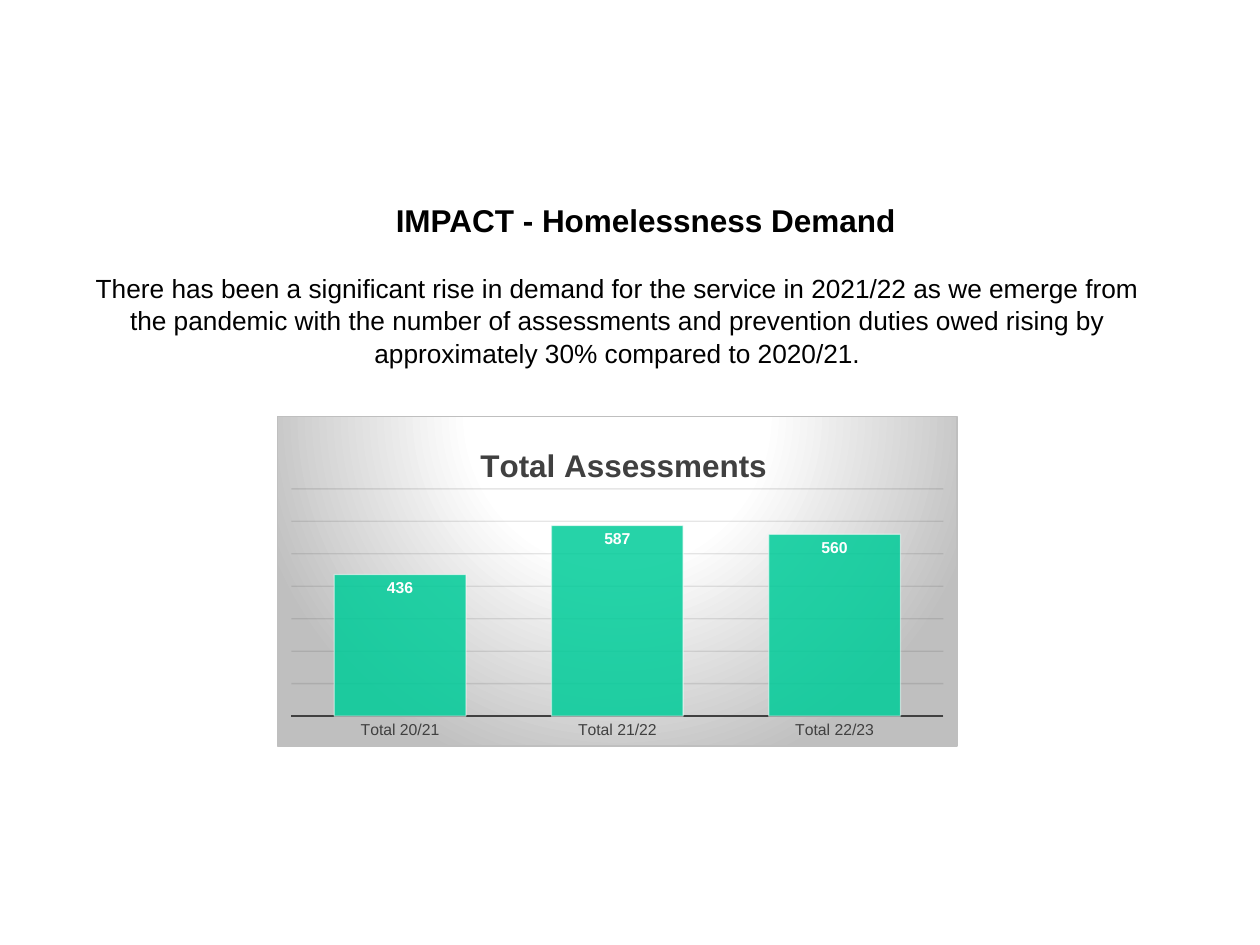
from lxml.etree import SubElement
from pptx import Presentation
from pptx.chart.data import CategoryChartData
from pptx.dml.color import RGBColor
from pptx.enum.chart import XL_CHART_TYPE, XL_LABEL_POSITION, XL_TICK_LABEL_POSITION, XL_TICK_MARK
from pptx.enum.text import MSO_ANCHOR, PP_ALIGN
from pptx.oxml import parse_xml
from pptx.oxml.ns import nsdecls, qn
from pptx.util import Inches, Pt

BLACK = RGBColor(0x00, 0x00, 0x00)
WHITE = RGBColor(0xFF, 0xFF, 0xFF)
CHARCOAL = RGBColor(0x40, 0x40, 0x40)
GRID = RGBColor(0x0D, 0x0D, 0x0D)
SILVER = RGBColor(0xBF, 0xBF, 0xBF)
GREEN = RGBColor(0x00, 0xCC, 0x99)
FONT = "Arial"


class SlideBuilder:
    def __init__(self, presentation):
        self.width = presentation.slide_width
        self.height = presentation.slide_height
        self.slide = presentation.slides.add_slide(presentation.slide_layouts[6])

    def place(self, left, top, width, height):
        return (int(left * self.width), int(top * self.height),
                int(width * self.width), int(height * self.height))

    def style(self, font, size, color, bold=False):
        font.name = FONT
        font.size = Pt(size)
        font.bold = bold
        font.color.rgb = color

    def line(self, line, color, width, opacity=100):
        line.color.rgb = color
        line.width = Pt(width)
        self.fade(line.fill, opacity)

    def fade(self, fill, opacity):
        color = fill._xPr.find(".//" + qn("a:srgbClr"))
        SubElement(color, qn("a:alpha")).set("val", str(opacity * 1000))

    def text(self, area, words, size, bold=False, anchor=MSO_ANCHOR.TOP, spacing=1.0):
        frame = self.slide.shapes.add_textbox(*self.place(*area)).text_frame
        frame.word_wrap = True
        frame.vertical_anchor = anchor
        paragraph = frame.paragraphs[0]
        paragraph.alignment = PP_ALIGN.CENTER
        paragraph.line_spacing = spacing
        run = paragraph.add_run()
        run.text = words
        self.style(run.font, size, BLACK, bold)

    def layout(self, element, **values):
        for old in element.findall(qn("c:layout")):
            element.remove(old)
        layout = parse_xml(f"<c:layout {nsdecls('c')}><c:manualLayout/></c:layout>")
        for name, value in values.items():
            SubElement(layout[0], qn("c:" + name)).set("val", str(value))
        return layout

    def backdrop(self, chart):
        stops = "".join(
            f'<a:gs pos="{position * 1000}"><a:srgbClr val="{color}"/></a:gs>'
            for position, color in ((0, WHITE), (39, WHITE), (100, SILVER)))
        chart.font._element.getparent()
        properties = parse_xml(
            f'<c:spPr {nsdecls("c", "a")}><a:gradFill><a:gsLst>{stops}</a:gsLst>'
            '<a:path path="circle"><a:fillToRect l="50000" t="-80000" r="50000" b="180000"/>'
            f'</a:path></a:gradFill><a:ln w="{Pt(0.75)}"><a:solidFill>'
            f'<a:srgbClr val="{SILVER}"/></a:solidFill></a:ln></c:spPr>')
        chart._chartSpace.find(qn("c:txPr")).addprevious(properties)

    def column_chart(self, area, heading, categories, values):
        data = CategoryChartData()
        data.categories = categories
        data.add_series("Series 1", values)
        chart = self.slide.shapes.add_chart(
            XL_CHART_TYPE.COLUMN_CLUSTERED, *self.place(*area), data).chart
        self.style(chart.font, 10, BLACK)
        chart.has_legend = False
        self.backdrop(chart)

        run = chart.chart_title.text_frame.paragraphs[0].add_run()
        run.text = heading
        self.style(run.font, 18, CHARCOAL, True)
        title = chart.chart_title._element
        title.find(qn("c:tx")).addnext(
            self.layout(title, xMode="edge", yMode="edge", x=0.29, y=0.07))
        plot_area = chart._chartSpace.chart.plotArea
        plot_area.insert(0, self.layout(
            plot_area, layoutTarget="inner", xMode="edge", yMode="edge",
            x=0.02, y=0.22, w=0.96, h=0.69))

        category_axis = chart.category_axis
        category_axis.major_tick_mark = XL_TICK_MARK.NONE
        self.style(category_axis.tick_labels.font, 9, CHARCOAL)
        self.line(category_axis.format.line, CHARCOAL, 1.5)
        value_axis = chart.value_axis
        value_axis.minimum_scale, value_axis.maximum_scale = 0, 700
        value_axis.major_unit = 100
        value_axis.tick_label_position = XL_TICK_LABEL_POSITION.NONE
        value_axis.visible = False
        self.line(value_axis.major_gridlines.format.line, GRID, 0.75, 10)

        plot = chart.plots[0]
        plot.gap_width = 65
        plot.vary_by_categories = False
        series = plot.series[0]
        series.format.fill.solid()
        series.format.fill.fore_color.rgb = GREEN
        self.fade(series.format.fill, 85)
        self.line(series.format.line, WHITE, 0.75, 50)
        labels = series.data_labels
        labels.show_value = True
        labels.position = XL_LABEL_POSITION.INSIDE_END
        self.style(labels.font, 9, WHITE, True)


def main():
    presentation = Presentation()
    presentation.slide_width = Inches(10)
    presentation.slide_height = Inches(7.5)
    builder = SlideBuilder(presentation)
    builder.text((0.025, 0.21, 0.975, 0.045), "IMPACT - Homelessness Demand", 18,
                 bold=True, anchor=MSO_ANCHOR.MIDDLE)
    builder.text((0.06, 0.28, 0.86, 0.48),
                 "There has been a significant rise in demand for the service in 2021/22 "
                 "as we emerge from the pandemic with the number of assessments and "
                 "prevention duties owed rising by approximately 30% compared to 2020/21.",
                 15, spacing=1.04)
    builder.column_chart((0.22, 0.44, 0.54, 0.35), "Total Assessments",
                         ("Total 20/21", "Total 21/22", "Total 22/23"), (436, 587, 560))
    presentation.save("out.pptx")


if __name__ == "__main__":
    main()
